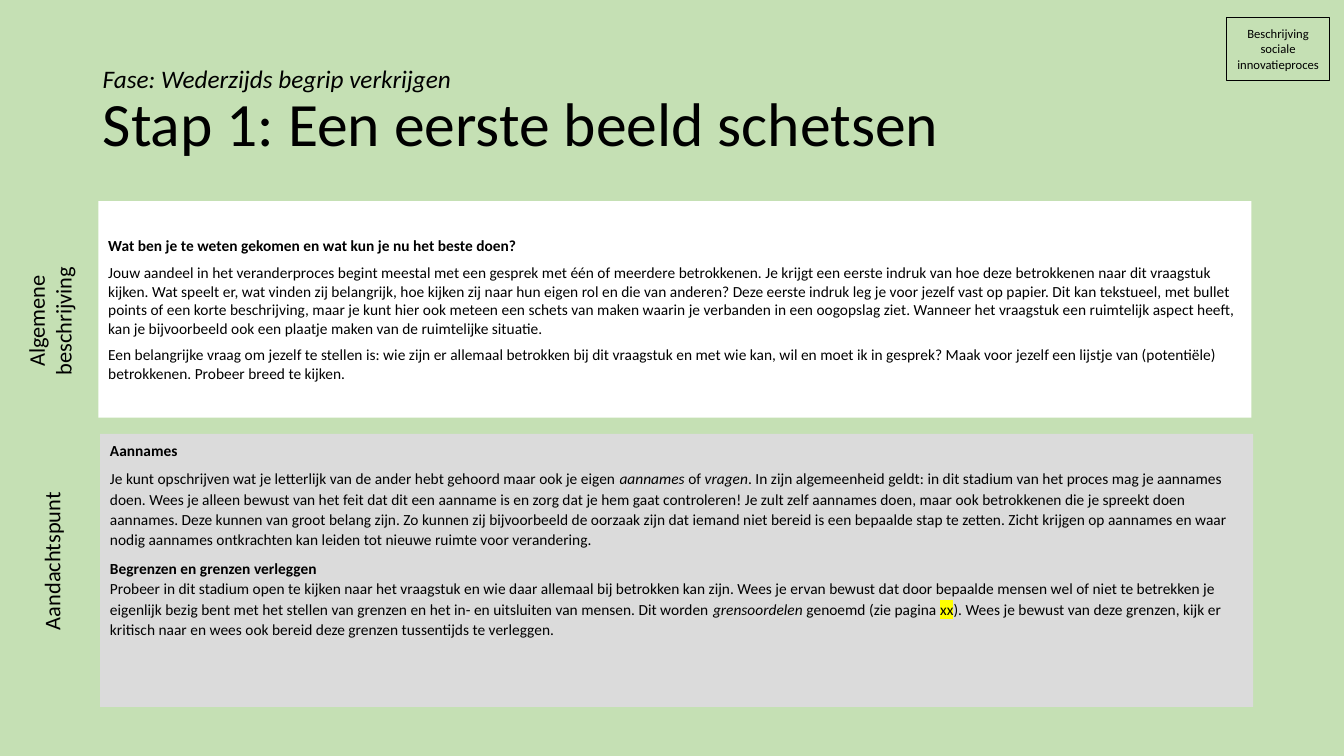
from copy import deepcopy

from lxml.etree import SubElement
from pptx import Presentation
from pptx.dml.color import RGBColor
from pptx.enum.shapes import MSO_SHAPE as Preset
from pptx.enum.text import MSO_ANCHOR as Anchor, MSO_AUTO_SIZE as AutoSize, PP_ALIGN as Align
from pptx.oxml.ns import qn
from pptx.util import Pt

GREEN, WHITE, GREY, BLACK, YELLOW = "C5E0B4", "FFFFFF", "DBDBDB", "000000", "FFFF00"
BOLD, ITALIC = {"bold": True}, {"italic": True}
LABEL_OFFSET = 31

DESCRIPTION = [
    [("Wat ben je te weten gekomen en wat kun je nu het beste doen?", BOLD)],
    [("Jouw aandeel in het veranderproces begint meestal met een gesprek met één of meerdere "
      "betrokkenen. Je krijgt een eerste indruk van hoe deze betrokkenen naar dit vraagstuk kijken. "
      "Wat speelt er, wat vinden zij belangrijk, hoe kijken zij naar hun eigen rol en die van anderen? "
      "Deze eerste indruk leg je voor jezelf vast op papier. Dit kan tekstueel, met bullet points of "
      "een korte beschrijving, maar je kunt hier ook meteen een schets van maken waarin je verbanden "
      "in een oogopslag ziet. Wanneer het vraagstuk een ruimtelijk aspect heeft, kan je bijvoorbeeld "
      "ook een plaatje maken van de ruimtelijke situatie.", {})],
    [("Een belangrijke vraag om jezelf te stellen is: wie zijn er allemaal betrokken bij dit vraagstuk "
      "en met wie kan, wil en moet ik in gesprek? Maak voor jezelf een lijstje van (potentiële) "
      "betrokkenen. Probeer breed te kijken.", {})],
]
ATTENTION = [
    [("Aannames", BOLD)],
    [("Je kunt opschrijven wat je letterlijk van de ander hebt gehoord maar ook je eigen ", {}),
     ("aannames", ITALIC), (" of ", {}), ("vragen", ITALIC),
     (". In zijn algemeenheid geldt: in dit stadium van het proces mag je aannames doen. Wees je "
      "alleen bewust van het feit dat dit een aanname is en zorg dat je hem gaat controleren! Je zult "
      "zelf aannames doen, maar ook betrokkenen die je spreekt doen aannames. Deze kunnen van groot "
      "belang zijn. Zo kunnen zij bijvoorbeeld de oorzaak zijn dat iemand niet bereid is een bepaalde "
      "stap te zetten. Zicht krijgen op aannames en waar nodig aannames ontkrachten kan leiden tot "
      "nieuwe ruimte voor verandering.", {})],
    [("Begrenzen en grenzen verleggen\n", BOLD),
     ("Probeer in dit stadium open te kijken naar het vraagstuk en wie daar allemaal bij betrokken kan "
      "zijn. Wees je ervan bewust dat door bepaalde mensen wel of niet te betrekken je eigenlijk bezig "
      "bent met het stellen van grenzen en het in- en uitsluiten van mensen. Dit worden ", {}),
     ("grensoordelen ", ITALIC), ("genoemd (zie pagina ", {}), ("xx", {"highlight": YELLOW}),
     ("). Wees je bewust van deze grenzen, kijk er kritisch naar en wees ook bereid deze grenzen "
      "tussentijds te verleggen.", {})],
]


def color(value):
    """Turn a hex string into a colour."""
    return RGBColor.from_string(value)


def set_all(target, values):
    """Set every attribute named in a dict."""
    for name, value in values.items():
        setattr(target, name, value)


def add_run(paragraph, text, size, highlight=None, **styles):
    """Add a formatted run, with a line break when the text ends in one."""
    run = paragraph.add_run()
    run.text = text.rstrip("\n")
    set_all(run.font, {"name": "Calibri", "size": Pt(size), **styles})
    run.font.color.rgb = color(BLACK)
    properties = run.font._element
    if highlight:
        mark = SubElement(properties, qn("a:highlight"))
        SubElement(mark, qn("a:srgbClr")).set("val", highlight)
        properties.find(qn("a:latin")).addprevious(mark)
    if text.endswith("\n"):
        paragraph.add_line_break()
        paragraph._p[-1].append(deepcopy(properties))


def write(shape, paragraphs, size, anchor=Anchor.TOP, **layout):
    """Fill a shape with paragraphs made of text and style pairs."""
    frame = shape.text_frame
    set_all(frame, {"word_wrap": True, "auto_size": AutoSize.NONE, "vertical_anchor": anchor})
    for index, runs in enumerate(paragraphs):
        paragraph = frame.add_paragraph() if index else frame.paragraphs[0]
        set_all(paragraph, layout)
        for text, styles in runs:
            add_run(paragraph, text, **{"size": size, **styles})


def add_panel(slide, box, fill, line=None):
    """Add a flat rectangle with an optional outline."""
    shape = slide.shapes.add_shape(Preset.RECTANGLE, *map(Pt, box))
    shape.shadow.inherit = False
    shape.fill.solid()
    shape.fill.fore_color.rgb = color(fill)
    if line:
        shape.line.color.rgb = color(line)
        shape.line.width = Pt(0.75)
    else:
        shape.line.fill.background()
    return shape


def add_title(slide, box):
    """Place the phase and step in the title placeholder."""
    title = slide.shapes.title
    set_all(title, dict(zip(("left", "top", "width", "height"), map(Pt, box))))
    runs = [("Fase: Wederzijds begrip verkrijgen \n", {"size": 18, "italic": True}),
            ("Stap 1: Een eerste beeld schetsen", {})]
    write(title, [runs], 44, Anchor.MIDDLE, alignment=Align.LEFT, line_spacing=0.9)


def add_section(slide, box, fill, paragraphs, anchor, spacing, label, label_size, label_shift):
    """Add a text panel with a rotated label to its left."""
    left, top, width, height = box
    panel = add_panel(slide, box, fill)
    write(panel, paragraphs, 11, anchor, alignment=Align.LEFT, space_before=Pt(6), line_spacing=spacing)
    label_width, label_height = label_size
    label_left = left - LABEL_OFFSET - label_width / 2
    label_top = top + (height - label_height) / 2 + label_shift
    caption = slide.shapes.add_textbox(*map(Pt, (label_left, label_top, label_width, label_height)))
    caption.text_frame._txBody.bodyPr.set("vert", "vert270")
    write(caption, [[(label, {})]], 16, alignment=Align.CENTER)


def add_tag(slide, box):
    """Add the outlined process tag."""
    tag = add_panel(slide, box, GREEN, BLACK)
    write(tag, [[("Beschrijving sociale innovatieproces", {})]], 9, Anchor.MIDDLE, alignment=Align.CENTER)


def main():
    """Build and save the slide."""
    presentation = Presentation()
    set_all(presentation, {"slide_width": Pt(960), "slide_height": Pt(540)})
    slide = presentation.slides.add_slide(presentation.slide_layouts[5])
    slide.background.fill.solid()
    slide.background.fill.fore_color.rgb = color(GREEN)
    add_title(slide, (66.2, 28.6, 828, 104.4))
    add_section(slide, (70.2, 143.6, 823.7, 154.8), WHITE, DESCRIPTION, Anchor.MIDDLE, 1.0,
                "Algemene beschrijving", (53.3, 118), 8.4)
    add_section(slide, (71.5, 309.9, 823.7, 195), GREY, ATTENTION, Anchor.TOP, 1.1,
                "Aandachtspunt", (33.8, 150), -6.5)
    add_tag(slide, (876.2, 12.4, 73.4, 45))
    presentation.save("out.pptx")


if __name__ == "__main__":
    main()
